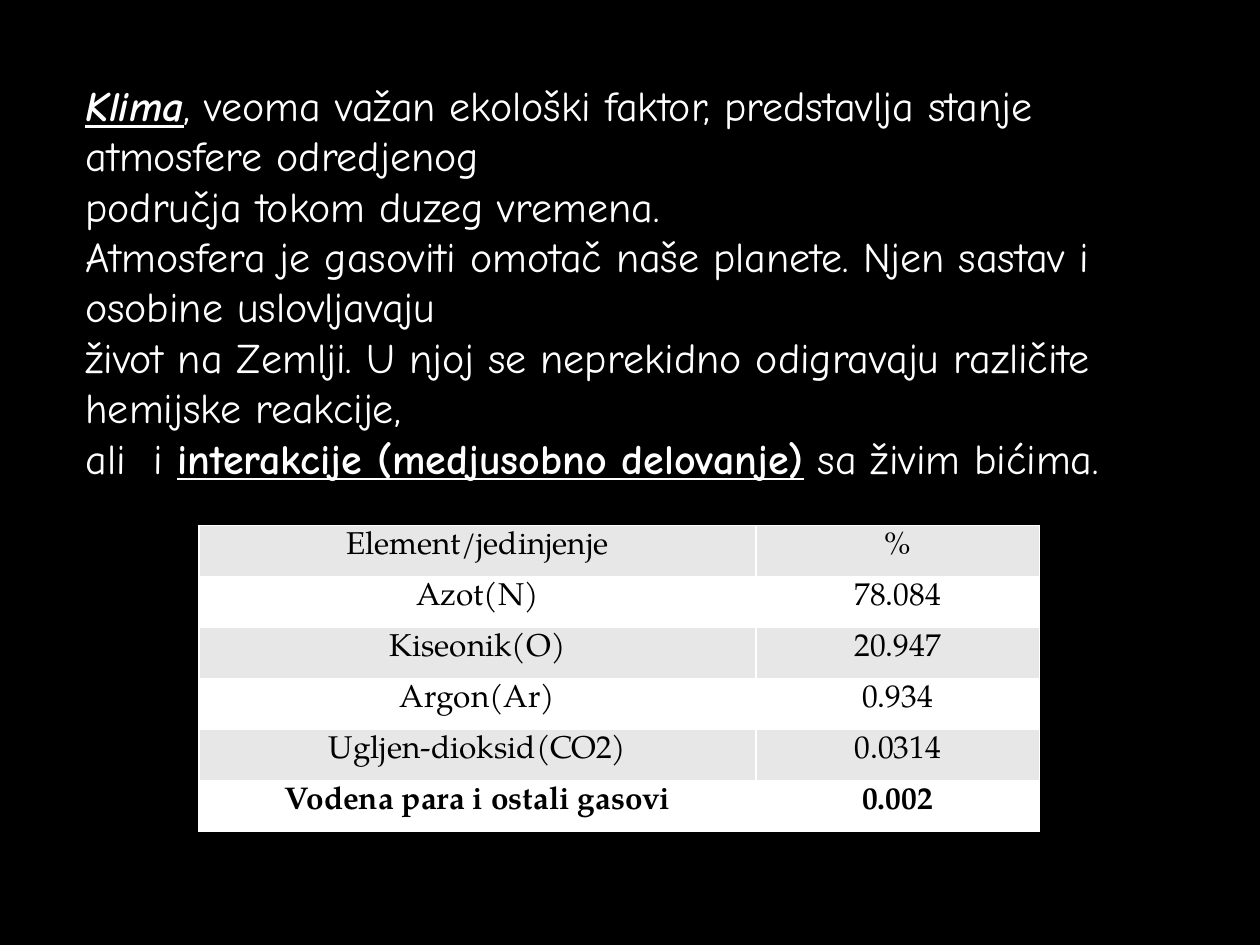
from typing import NamedTuple

from lxml import etree
from pptx import Presentation
from pptx.dml.color import RGBColor
from pptx.enum.text import PP_ALIGN
from pptx.oxml.ns import qn
from pptx.util import Inches, Pt

BLACK = RGBColor(0x00, 0x00, 0x00)
WHITE = RGBColor(0xFF, 0xFF, 0xFF)
BAND_GREY = RGBColor(0xE7, 0xE7, 0xE7)
CENTER = PP_ALIGN.CENTER

BODY_FORMAT = {"name": "Comic Neue", "size": Pt(24)}
CELL_FORMAT = {"name": "TeX Gyre Pagella", "size": Pt(18)}
TERM_FORMAT = {"bold": True, "italic": True, "underline": True}
EMPHASIS_FORMAT = {"bold": True, "underline": True}


class Span(NamedTuple):
    text: str
    format: dict = {}


class GasRow(NamedTuple):
    name: str
    share: str
    format: dict = {}


CLIMATE_LINES = [
    [Span("Klima", TERM_FORMAT),
     Span(", veoma važan ekološki faktor, predstavlja stanje")],
    [Span("atmosfere odredjenog")],
    [Span("područja tokom duzeg vremena.")],
    [Span("Atmosfera je gasoviti omotač naše planete. Njen sastav i")],
    [Span("osobine uslovljavaju")],
    [Span("život na Zemlji. U njoj se neprekidno odigravaju različite")],
    [Span("hemijske reakcije,")],
    [Span("ali  i "),
     Span("interakcije (medjusobno delovanje)", EMPHASIS_FORMAT),
     Span(" sa živim bićima.")],
]

GAS_ROWS = [
    GasRow("Element/jedinjenje", "%"),
    GasRow("Azot(N)", "78.084"),
    GasRow("Kiseonik(O)", "20.947"),
    GasRow("Argon(Ar)", "0.934"),
    GasRow("Ugljen-dioksid(CO2)", "0.0314"),
    GasRow("Vodena para i ostali gasovi", "0.002", {"bold": True}),
]
COLUMN_WIDTHS = (Inches(4.42), Inches(2.25))
TABLE_HEIGHT = Inches(2.43)


def add_run(paragraph, text: str, color: RGBColor, format_values: dict) -> None:
    run = paragraph.add_run()
    run.text = text
    run.font.color.rgb = color
    for attribute, value in format_values.items():
        setattr(run.font, attribute, value)


def add_climate_text(slide) -> None:
    box = slide.shapes.add_textbox(
        Inches(0.58), Inches(0.58), Inches(9.21), Inches(3.33))
    frame = box.text_frame
    frame.word_wrap = True
    for index, line in enumerate(CLIMATE_LINES):
        paragraph = frame.add_paragraph() if index else frame.paragraphs[0]
        for span in line:
            add_run(paragraph, span.text, WHITE, BODY_FORMAT | span.format)


def set_borders(cell, color: RGBColor, width: int) -> None:
    properties = cell._tc.get_or_add_tcPr()
    for position, side in enumerate(("a:lnL", "a:lnR", "a:lnT", "a:lnB")):
        line = etree.Element(qn(side), w=str(width))
        fill = etree.SubElement(line, qn("a:solidFill"))
        etree.SubElement(fill, qn("a:srgbClr"), val=str(color))
        properties.insert(position, line)


def add_gas_table(slide) -> None:
    table = slide.shapes.add_table(
        len(GAS_ROWS), len(COLUMN_WIDTHS), Inches(1.58), Inches(4.17),
        sum(COLUMN_WIDTHS), TABLE_HEIGHT).table
    for column, width in zip(table.columns, COLUMN_WIDTHS):
        column.width = width
    for row_index, gas in enumerate(GAS_ROWS):
        for column_index, text in enumerate((gas.name, gas.share)):
            cell = table.cell(row_index, column_index)
            cell.fill.solid()
            cell.fill.fore_color.rgb = WHITE if row_index % 2 else BAND_GREY
            set_borders(cell, WHITE, Pt(1))
            paragraph = cell.text_frame.paragraphs[0]
            paragraph.alignment = CENTER
            add_run(paragraph, text, BLACK,
                    CELL_FORMAT | {"bold": False} | gas.format)


def main() -> None:
    presentation = Presentation()
    presentation.slide_width = Inches(10)
    presentation.slide_height = Inches(7.5)

    # Blank layout on a black background
    slide = presentation.slides.add_slide(presentation.slide_layouts[6])
    slide.background.fill.solid()
    slide.background.fill.fore_color.rgb = BLACK

    # Definition above, composition of the air below
    add_climate_text(slide)
    add_gas_table(slide)
    presentation.save("out.pptx")


if __name__ == "__main__":
    main()
